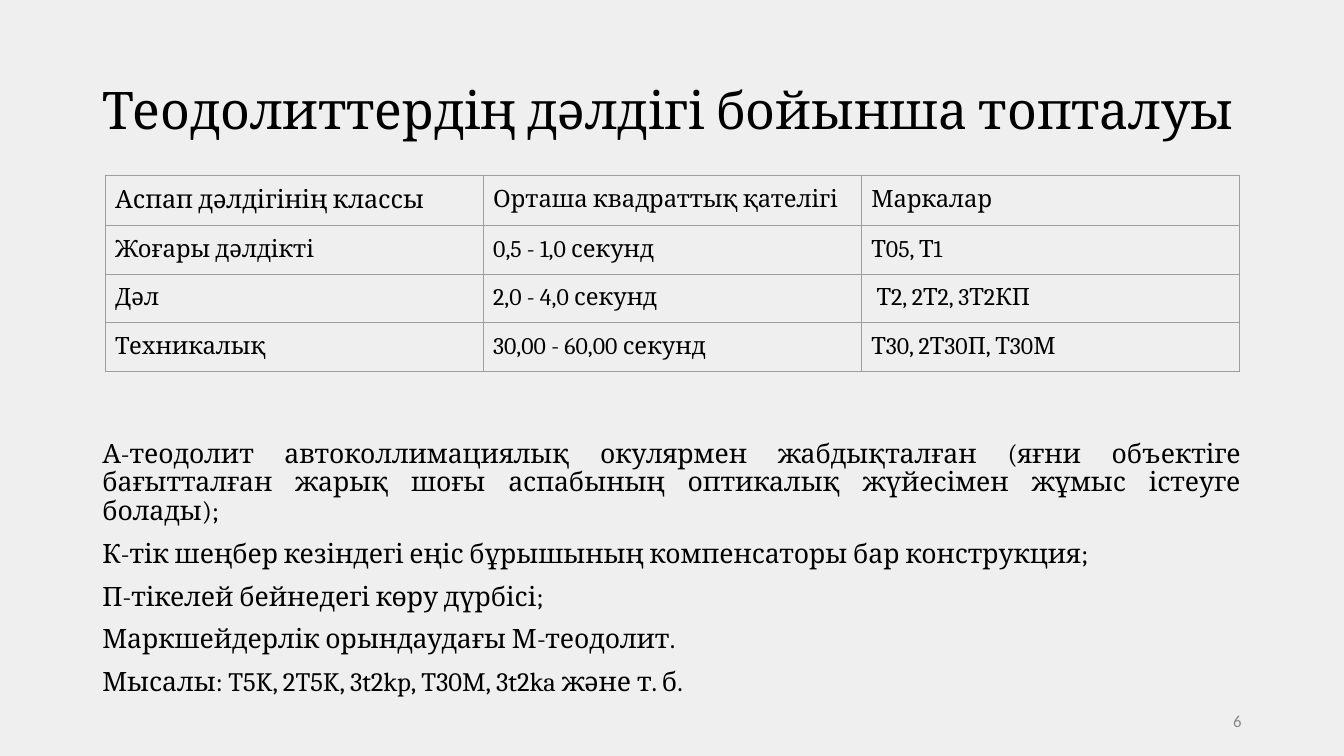
from dataclasses import dataclass

from lxml import etree
from pptx import Presentation
from pptx import util as u
from pptx.dml.color import RGBColor
from pptx.enum import text
from pptx.oxml import ns


@dataclass(frozen=True)
class Theme:
    back: str = "EFEFEF"
    ink: str = "000000"
    grey: str = "888888"
    rule: str = "9E9E9E"
    serif: str = "Cambria"
    sans: str = "Calibri"
    title: int = 37
    body: int = 19
    head: int = 18
    cell: int = 17
    note: int = 12


class Deck:
    def __init__(self, theme):
        self.theme = theme
        self.prs = Presentation()
        self.prs.slide_width = u.Cm(33.87)
        self.prs.slide_height = u.Cm(19.05)
        self.slide = None

    def page(self):
        self.slide = self.prs.slides.add_slide(self.prs.slide_layouts[5])
        fill = self.slide.background.fill
        fill.solid()
        fill.fore_color.rgb = RGBColor.from_string(self.theme.back)

    def style(self, para, size, color=None, font=None):
        for run in para.runs:
            run.font.size = u.Pt(size)
            run.font.name = font or self.theme.serif
            run.font.color.rgb = RGBColor.from_string(color or self.theme.ink)

    def title(self, words, left, top, width, height):
        box = self.slide.shapes.title
        box.left, box.top = u.Cm(left), u.Cm(top)
        box.width, box.height = u.Cm(width), u.Cm(height)
        frame = box.text_frame
        frame.text = words
        frame.word_wrap = True
        frame.auto_size = text.MSO_AUTO_SIZE.NONE
        frame.vertical_anchor = text.MSO_ANCHOR.MIDDLE
        para = frame.paragraphs[0]
        para.alignment = text.PP_ALIGN.LEFT
        para.line_spacing = 0.9
        self.style(para, self.theme.title)

    def box(self, words, left, top, width, height):
        shape = self.slide.shapes.add_textbox(
            u.Cm(left), u.Cm(top), u.Cm(width), u.Cm(height))
        frame = shape.text_frame
        frame.word_wrap = True
        frame.text = words
        return frame

    def body(self, lines, *place):
        frame = self.box("\n".join(lines), *place)
        for para in frame.paragraphs:
            para.alignment = text.PP_ALIGN.JUSTIFY
            para.line_spacing = 0.9
            para.space_before = u.Pt(10)
            self.style(para, self.theme.body)

    def number(self, words, *place):
        frame = self.box(words, *place)
        frame.vertical_anchor = text.MSO_ANCHOR.MIDDLE
        para = frame.paragraphs[0]
        para.alignment = text.PP_ALIGN.RIGHT
        self.style(para, self.theme.note, self.theme.grey, self.theme.sans)

    def border(self, cell):
        props = cell._tc.get_or_add_tcPr()
        for spot, side in enumerate(("lnL", "lnR", "lnT", "lnB")):
            line = etree.Element(ns.qn(f"a:{side}"), w=str(u.Pt(0.75)))
            fill = etree.SubElement(line, ns.qn("a:solidFill"))
            etree.SubElement(fill, ns.qn("a:srgbClr"), val=self.theme.rule)
            props.insert(spot, line)

    def table(self, rows, left, top, wide, high):
        count = len(rows[0])
        grid = self.slide.shapes.add_table(
            len(rows), count, u.Cm(left), u.Cm(top),
            u.Cm(wide * count), u.Cm(high * len(rows))).table
        grid.first_row = grid.horz_banding = False
        for r, row in enumerate(rows):
            for c, words in enumerate(row):
                cell = grid.cell(r, c)
                cell.text = words
                cell.fill.background()
                cell.margin_left = cell.margin_right = u.Cm(0.25)
                cell.margin_top = cell.margin_bottom = u.Cm(0.25)
                size = self.theme.head if r == c == 0 else self.theme.cell
                self.style(cell.text_frame.paragraphs[0], size)
                self.border(cell)

    def save(self):
        self.prs.save("out.pptx")


ROWS = [
    ("Аспап дәлдігінің классы", "Орташа квадраттық қателігі", "Маркалар"),
    ("Жоғары дәлдікті", "0,5 - 1,0 секунд", "Т05, Т1"),
    ("Дәл", "2,0 - 4,0 секунд", " Т2, 2Т2, 3Т2КП"),
    ("Техникалық", "30,00 - 60,00 секунд", "Т30, 2Т30П, Т30М"),
]

LINES = [
    "А-теодолит автоколлимациялық окулярмен жабдықталған (яғни объектіге "
    "бағытталған жарық шоғы аспабының оптикалық жүйесімен жұмыс істеуге болады);",
    "К-тік шеңбер кезіндегі еңіс бұрышының компенсаторы бар конструкция;",
    "П-тікелей бейнедегі көру дүрбісі;",
    "Маркшейдерлік орындаудағы М-теодолит.",
    "Мысалы: T5K, 2T5K, 3t2kp, T30M, 3t2ka және т. б.",
]


def main():
    deck = Deck(Theme())
    deck.page()
    deck.title("Теодолиттердің дәлдігі бойынша топталуы", 2.33, 1.01, 29.21, 3.68)
    deck.body(LINES, 2.33, 10.97, 29.21, 6.3)
    deck.number("6", 23.92, 17.66, 7.62, 1.01)
    deck.table(ROWS, 2.65, 4.43, 9.53, 1.07)
    deck.save()


if __name__ == "__main__":
    main()
